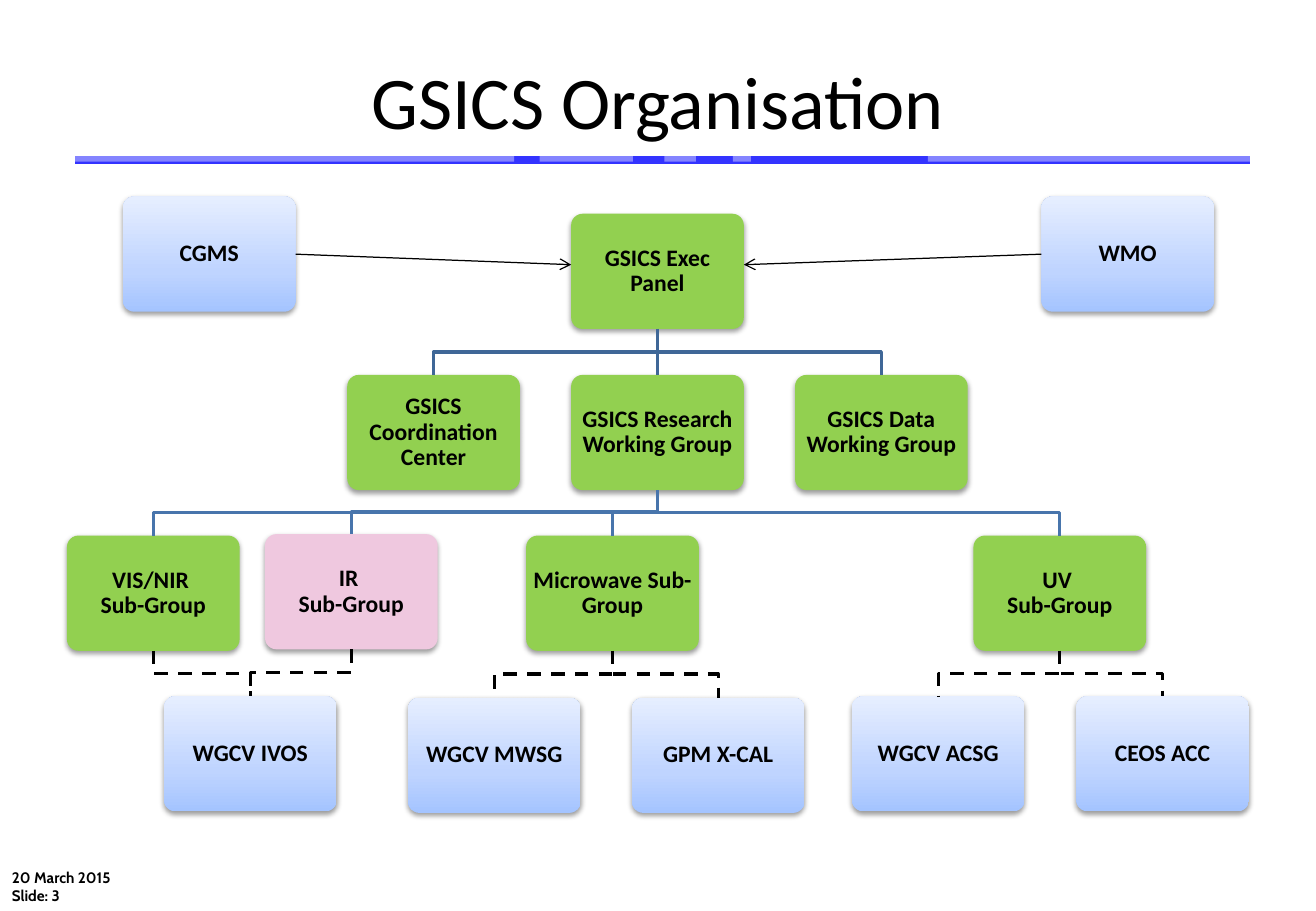
from lxml import etree
from copy import deepcopy
from pptx import Presentation
from pptx.dml.color import RGBColor
from pptx.enum.dml import MSO_LINE
from pptx.enum.shapes import MSO_CONNECTOR, MSO_SHAPE
from pptx.enum.text import MSO_ANCHOR, PP_ALIGN
from pptx.oxml.ns import qn
from pptx.util import Cm, Pt

STRAIGHT = MSO_CONNECTOR.STRAIGHT
RECT, ROUND = MSO_SHAPE.RECTANGLE, MSO_SHAPE.ROUNDED_RECTANGLE
DASH = MSO_LINE.DASH
MIDDLE = MSO_ANCHOR.MIDDLE
CENTER = PP_ALIGN.CENTER
BOTTOM, LEFT, RIGHT, TOP = 2, 1, 3, 0

COLORS = {
    "text": "000000", "bar": "3333FF", "veil": "FFFFFF",
    "green": "92D050", "pink": "EFC8DF",
    "upper": "3F6797", "lower": "4875AC", "dashed": "000000",
}
BLUE_STOPS = [(0, "A4C4FF"), (0.35, "BFD4FF"), (1, "E6EEFF")]

NODE_W, NODE_H = 3.61, 2.41
MID_X, PITCH = 10.54, 4.68
GROUP_Y, SUB_Y, PARTNER_Y = 3.73, 7.09, 10.45
NODES = {
    "cgms": ("CGMS", 1.17, 0, "blue"),
    "wmo": ("WMO", 20.37, 0, "blue"),
    "exec": ("GSICS Exec Panel", MID_X, 0.36, "green"),
    "center": ("GSICS Coordination Center", MID_X - PITCH, GROUP_Y, "green"),
    "research": ("GSICS Research Working Group", MID_X, GROUP_Y, "green"),
    "data": ("GSICS Data Working Group", MID_X + PITCH, GROUP_Y, "green"),
    "vis": ("VIS/NIR \nSub-Group", 0, SUB_Y, "green"),
    "ir": ("IR \nSub-Group", 4.14, SUB_Y - 0.03, "pink"),
    "mw": ("Microwave Sub-Group", 9.6, SUB_Y, "green"),
    "uv": ("UV \nSub-Group", 18.95, SUB_Y, "green"),
    "ivos": ("WGCV IVOS", 2.03, PARTNER_Y, "blue"),
    "mwsg": ("WGCV MWSG", 7.13, PARTNER_Y + 0.03, "blue"),
    "gpm": ("GPM X-CAL", 11.81, PARTNER_Y + 0.03, "blue"),
    "acsg": ("WGCV ACSG", 16.41, PARTNER_Y, "blue"),
    "acc": ("CEOS ACC", 21.1, PARTNER_Y, "blue"),
}
ELBOWS = [
    ("exec", ["center", "data"], "upper"),
    ("research", ["vis", "ir", "mw", "uv"], "lower"),
    ("vis", ["ivos"], "dashed"),
    ("ir", ["ivos"], "dashed"),
    ("mw", ["mwsg", "gpm"], "dashed"),
    ("uv", ["acsg", "acc"], "dashed"),
]
VEILS = [(0.03, 10.72), (11.28, 1.95), (13.89, 0.66), (15.32, 0.38), (19.4, 8.1)]


def rgb(name):
    return RGBColor.from_string(COLORS[name])


def add_text(p, text, size, font, bold=False):
    for i, part in enumerate(text.split("\n")):
        if i:
            p.add_line_break()
        r = p.add_run()
        r.text = part
        r.font.size, r.font.name, r.font.bold = Pt(size), font, bold
        r.font.color.rgb = rgb("text")


def add_line(s, x1, y1, x2, y2, color, width):
    ln = s.shapes.add_connector(STRAIGHT, x1, y1, x2, y2)
    ln.line.color.rgb = rgb(color)
    ln.line.width = Pt(width)
    etree.SubElement(ln._element.spPr, qn("a:effectLst"))
    return ln


def add_alpha(fill_parent, percent):
    clr = fill_parent.find(".//" + qn("a:srgbClr"))
    etree.SubElement(clr, qn("a:alpha"), val=str(percent * 1000))


def add_shadow(sp):
    sp.shadow.inherit = False
    effects = sp._element.spPr.find(qn("a:effectLst"))
    shadow = etree.SubElement(effects, qn("a:outerShdw"), blurRad="40000",
                              dist="20000", dir="5400000", rotWithShape="0")
    etree.SubElement(shadow, qn("a:srgbClr"), val=COLORS["text"])
    add_alpha(shadow, 38)


def fill_blue(sp):
    sp.fill.gradient()
    sp.fill.gradient_angle = 90
    stops = sp._element.spPr.find(".//" + qn("a:gsLst"))
    stops.append(deepcopy(stops[-1]))
    for stop, (pos, color) in zip(sp.fill.gradient_stops, BLUE_STOPS):
        stop.position = pos
        stop.color.rgb = RGBColor.from_string(color)


def add_node(s, x, y, text, fill):
    sp = s.shapes.add_shape(ROUND, Cm(x), Cm(y), Cm(NODE_W), Cm(NODE_H))
    sp.adjustments[0] = 0.1
    if fill == "blue":
        fill_blue(sp)
    else:
        sp.fill.solid()
        sp.fill.fore_color.rgb = rgb(fill)
    sp.line.fill.background()
    add_shadow(sp)
    tf = sp.text_frame
    tf.word_wrap = True
    tf.vertical_anchor = MIDDLE
    tf.margin_left = tf.margin_right = tf.margin_top = tf.margin_bottom = Cm(0.07)
    p = tf.paragraphs[0]
    p.alignment = CENTER
    p.line_spacing = 0.9
    add_text(p, text, 14, "Calibri", True)
    return sp


def add_elbow(s, parent, child, color):
    x1, y1 = parent.left + parent.width // 2, parent.top + parent.height
    x2, y2 = child.left + child.width // 2, child.top
    mid = (y1 + y2) // 2
    builder = s.shapes.build_freeform(x1, y1)
    builder.add_line_segments([(x1, mid), (x2, mid), (x2, y2)], close=False)
    sp = builder.convert_to_shape()
    sp.fill.background()
    sp.shadow.inherit = False
    sp.line.color.rgb = rgb(color)
    sp.line.width = Pt(2)
    if color == "dashed":
        sp.line.dash_style = DASH


def add_header(s, x, y, w, h):
    bar_y = y + h - 0.06
    add_line(s, Cm(x + 0.2), Cm(bar_y), Cm(x + w), Cm(bar_y), "bar", 4.5)
    for veil_x, veil_w in VEILS:
        sp = s.shapes.add_shape(RECT, Cm(veil_x), Cm(bar_y - 0.33), Cm(veil_w), Cm(0.36))
        sp.fill.solid()
        sp.fill.fore_color.rgb = rgb("veil")
        add_alpha(sp._element.spPr, 40)
        sp.line.fill.background()
        sp.shadow.inherit = False
    title = s.shapes.title
    title.left, title.top, title.width, title.height = Cm(x), Cm(y), Cm(w), Cm(h)
    tf = title.text_frame
    tf.vertical_anchor = MIDDLE
    p = tf.paragraphs[0]
    p.alignment = CENTER
    add_text(p, "GSICS Organisation", 44, "Calibri")


def add_organisation(s, x, y):
    nodes = {key: add_node(s, x + dx, y + dy, text, fill)
             for key, (text, dx, dy, fill) in NODES.items()}
    for parent, children, color in ELBOWS:
        for child in children:
            add_elbow(s, nodes[parent], nodes[child], color)
    panel = nodes["exec"]
    trunk = add_line(s, 0, 0, 0, 0, "upper", 2)
    trunk.begin_connect(panel, BOTTOM)
    trunk.end_connect(nodes["research"], TOP)
    arrow_y = panel.top + panel.height // 2 - Cm(0.14)
    for key, side, end_x in (("cgms", RIGHT, panel.left),
                             ("wmo", LEFT, panel.left + panel.width)):
        ln = add_line(s, end_x, arrow_y, end_x, arrow_y, "text", 0.75)
        ln.begin_connect(nodes[key], side)
        etree.SubElement(ln.line._get_or_add_ln(), qn("a:tailEnd"), type="arrow")


def add_footer(s, x, y, w, h):
    tf = s.shapes.add_textbox(Cm(x), Cm(y), Cm(w), Cm(h)).text_frame
    tf.word_wrap = True
    add_text(tf.paragraphs[0], "20 March 2015", 9, "Cabin", True)
    add_text(tf.add_paragraph(), "Slide: 3", 9, "Cabin", True)


def main():
    prs = Presentation()
    prs.slide_width, prs.slide_height = Cm(27.51), Cm(19.05)
    s = prs.slides.add_slide(prs.slide_layouts[5])
    add_footer(s, 0, 18.03, 17.42, 1.02)
    add_header(s, 1.37, 0.76, 24.77, 2.65)
    add_organisation(s, 1.4, 4.11)
    prs.save("out.pptx")


if __name__ == "__main__":
    main()
